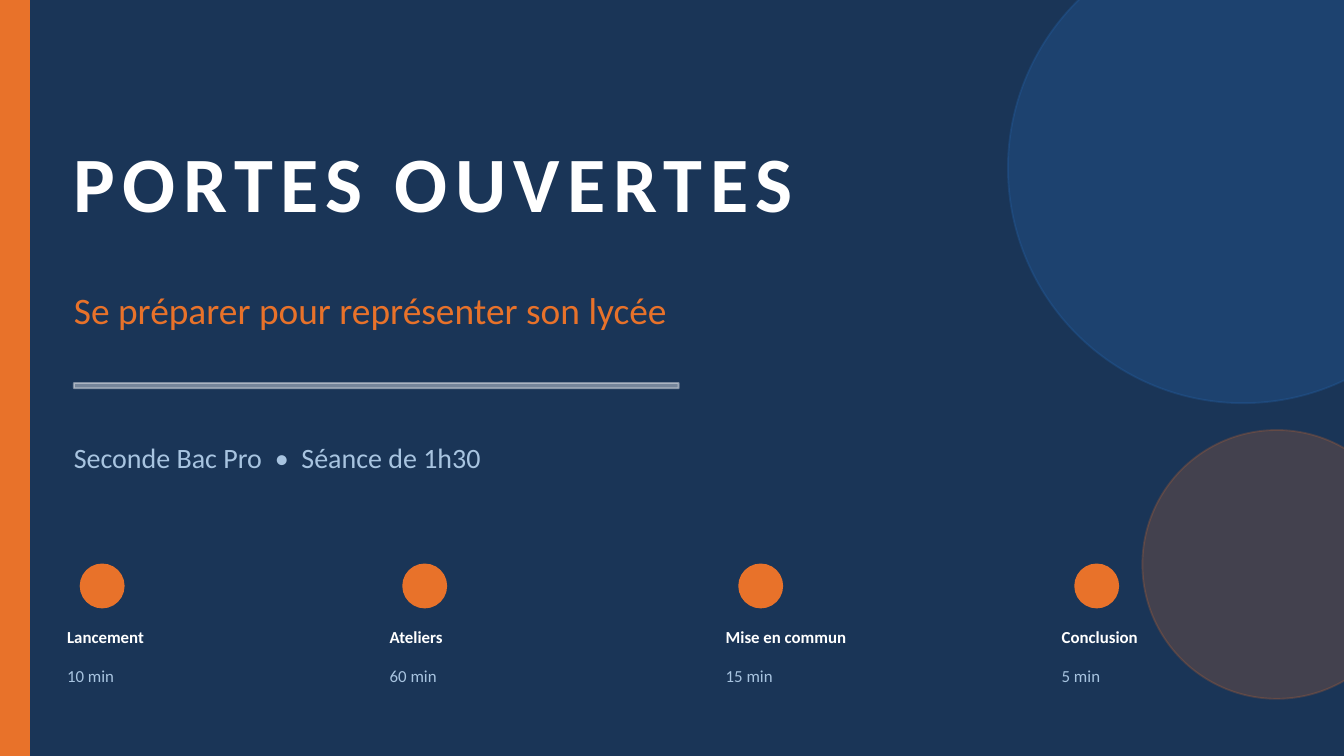
from dataclasses import dataclass

from lxml import etree
from pptx import Presentation
from pptx.dml.color import RGBColor
from pptx.enum.shapes import MSO_SHAPE
from pptx.enum.text import MSO_ANCHOR
from pptx.oxml.ns import qn
from pptx.util import Emu, Pt

RECT, OVAL = MSO_SHAPE.RECTANGLE, MSO_SHAPE.OVAL
MIDDLE = MSO_ANCHOR.MIDDLE
PX = 4572
WIDTH, HEIGHT = 2000, 1125


@dataclass(frozen=True)
class Theme:
    font: str = "Calibri"
    navy: str = "1A3557"
    blue: str = "2563A8"
    orange: str = "E8722A"
    pale: str = "A8C4E0"
    white: str = "FFFFFF"
    title: int = 42
    subtitle: int = 20
    detail: int = 15
    label: int = 9


THEME = Theme()


def px(*lengths):
    return [Emu(n * PX) for n in lengths]


def add_shape(slide, kind, box, color, opacity=100):
    s = slide.shapes.add_shape(kind, *px(*box))
    s.shadow.inherit = False
    s.fill.solid()
    s.fill.fore_color.rgb = RGBColor.from_string(color)
    s.line.color.rgb = RGBColor.from_string(color)
    s.line.width = Pt(1)
    if opacity < 100:
        for clr in s._element.spPr.iter(qn("a:srgbClr")):
            etree.SubElement(clr, qn("a:alpha"), val=str(opacity * 1000))


def add_text(slide, box, runs, size, color, bold=False):
    tf = slide.shapes.add_textbox(*px(*box)).text_frame
    frame = {"word_wrap": True, "vertical_anchor": MIDDLE, "margin_left": 0,
             "margin_top": 0, "margin_right": 0, "margin_bottom": 0}
    for name, value in frame.items():
        setattr(tf, name, value)
    p = tf.paragraphs[0]
    for text, spacing in runs:
        r = p.add_run()
        r.text = text
        for name, value in {"name": THEME.font, "size": Pt(size), "bold": bold}.items():
            setattr(r.font, name, value)
        r.font.color.rgb = RGBColor.from_string(color)
        if spacing:
            r._r.get_or_add_rPr().set("spc", str(spacing))


def add_backdrop(slide, x, y, w, h):
    slide.background.fill.solid()
    slide.background.fill.fore_color.rgb = RGBColor.from_string(THEME.navy)
    add_shape(slide, RECT, (x, y, 44, h), THEME.orange)
    add_shape(slide, OVAL, (x + w - 500, y - 100, 700, 700), THEME.blue, 30)
    add_shape(slide, OVAL, (x + w - 300, y + 640, 400, 400), THEME.orange, 20)


def add_heading(slide, x, y, w):
    add_text(slide, (x, y, w, 220), [("PORTES OUVERTES", 400)],
             THEME.title, THEME.white, True)
    add_text(slide, (x, y + 230, w, 140), [("Se préparer pour représenter son lycée", 0)],
             THEME.subtitle, THEME.orange)
    add_shape(slide, RECT, (x, y + 410, 900, 8), THEME.white, 40)
    add_text(slide, (x, y + 470, w, 100),
             [("Seconde Bac Pro", 0), (" ", 340), ("•", 0), (" ", 340),
              ("Séance de 1h30", 0)],
             THEME.detail, THEME.pale)


def add_step(slide, x, y, w, name, duration):
    add_shape(slide, OVAL, (x + 20, y, 64, 64), THEME.orange)
    add_text(slide, (x, y + 80, w, 56), [(name, 0)], THEME.label, THEME.white, True)
    add_text(slide, (x, y + 140, w, 50), [(duration, 0)], THEME.label, THEME.pale)


def main():
    prs = Presentation()
    prs.slide_width, prs.slide_height = px(WIDTH, HEIGHT)
    slide = prs.slides.add_slide(prs.slide_layouts[6])
    add_backdrop(slide, 0, 0, WIDTH, HEIGHT)
    add_heading(slide, 110, 160, 1600)
    steps = [(100, "Lancement", "10 min"), (580, "Ateliers", "60 min"),
             (1080, "Mise en commun", "15 min"), (1580, "Conclusion", "5 min")]
    for x, name, duration in steps:
        add_step(slide, x, 840, 300, name, duration)
    prs.save("out.pptx")


if __name__ == "__main__":
    main()
